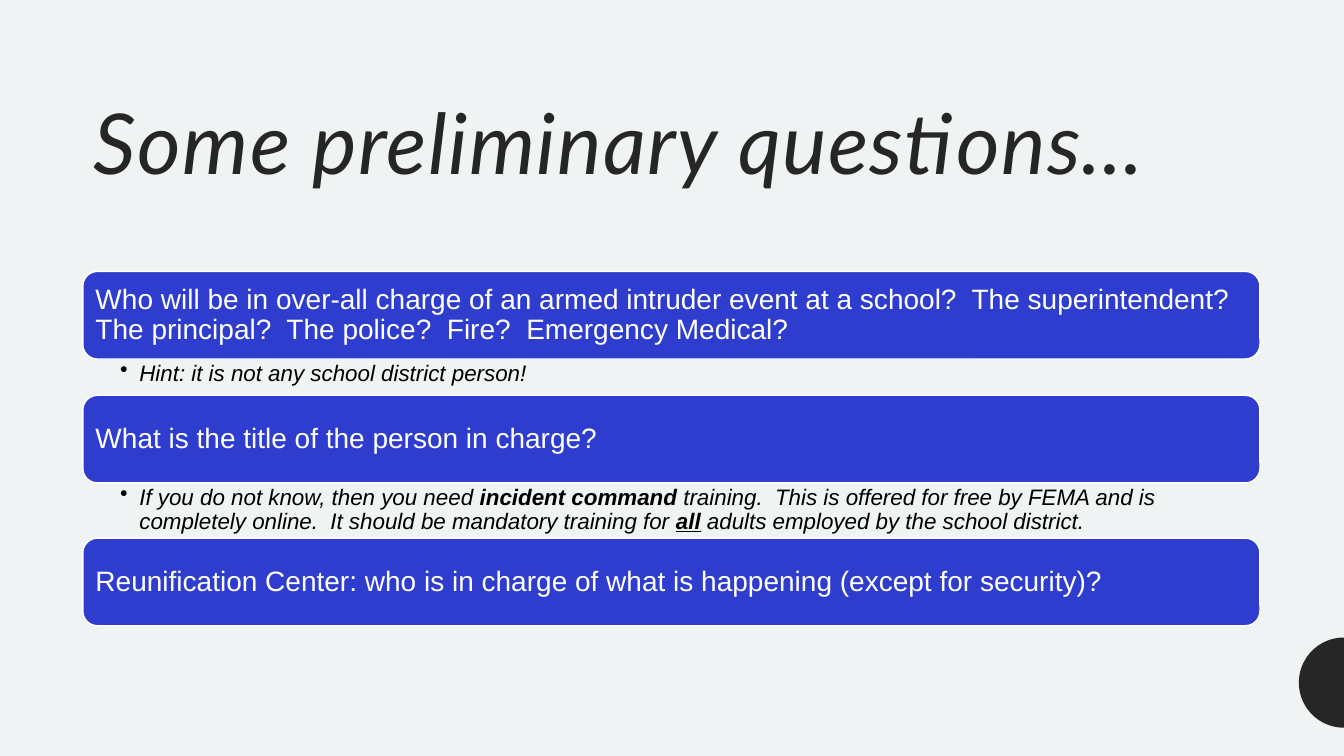
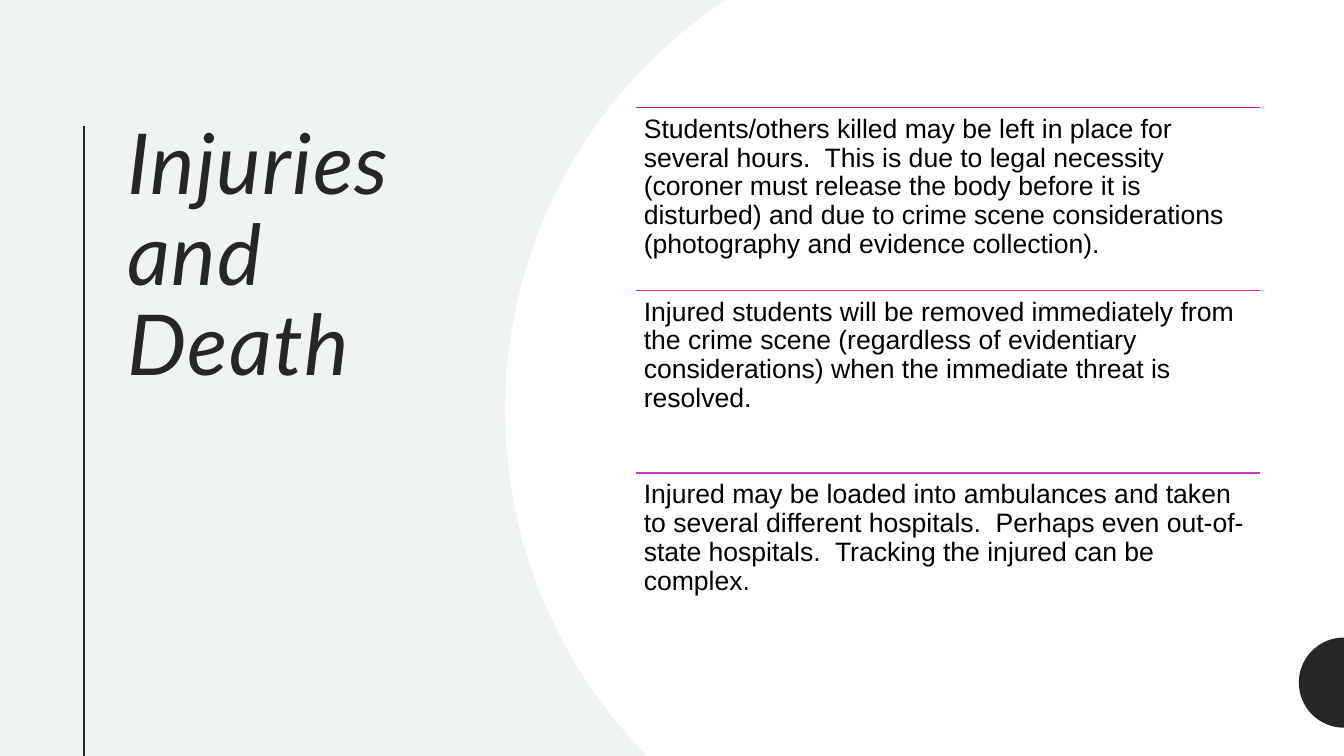
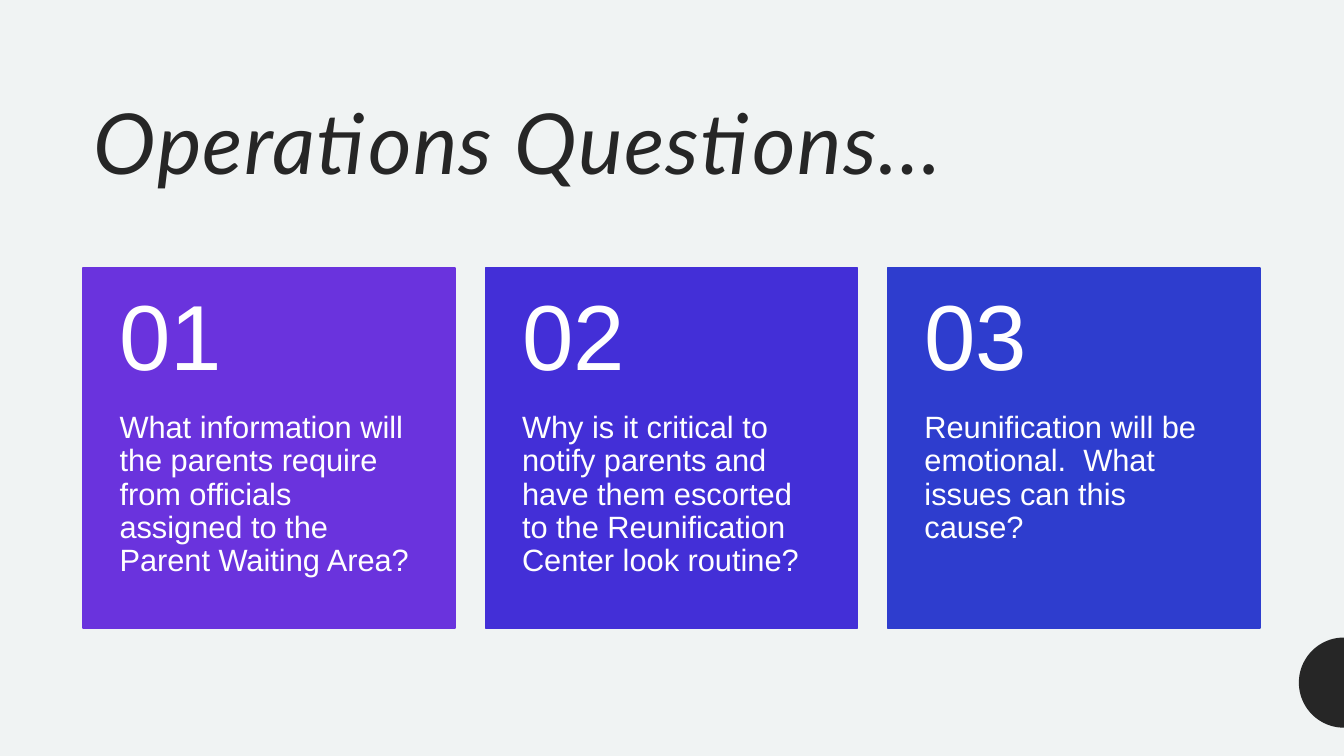
from math import asin, cos, pi, sin

from lxml.etree import SubElement
from pptx import Presentation
from pptx.dml.color import RGBColor
from pptx.enum.shapes import MSO_CONNECTOR as Link, MSO_SHAPE as Kind
from pptx.enum.text import MSO_ANCHOR as Anchor, PP_ALIGN as Align
from pptx.oxml.ns import qn
from pptx.util import Pt

HUES = {
    "back": "F0F3F3", "dark": "262626", "white": "FFFFFF", "black": "000000",
    "blue": "2E3DCE", "indigo": "432FD7", "violet": "6A33DD",
    "rose": "CB2169", "pink": "DA2497", "orchid": "DD33C2",
}
WIDE, HIGH = 960, 540
LEFT, SPAN = 59.2, 840.8

ASKS = [
    ("Who will be in over-all charge of an armed intruder event at a school?  "
     "The superintendent?  The principal?  The police?  Fire?  Emergency Medical?",
     25.9, [("Hint: it is not any school district person!", "")]),
    ("What is the title of the person in charge?", 39.4, [
        ("If you do not know, then you need ", ""),
        ("incident command ", "b"),
        ("training.  This is offered for free by FEMA and is completely online.  "
         "It should be mandatory training for ", ""),
        ("all", "bu"),
        (" adults employed by the school district.", ""),
    ]),
    ("Reunification Center: who is in charge of what is happening "
     "(except for security)?", 0, []),
]
FACTS = [
    ("rose", "Students/others killed may be left in place for several hours.  "
     "This is due to legal necessity (coroner must release the body before it is "
     "disturbed) and due to crime scene considerations (photography and evidence "
     "collection)."),
    ("pink", "Injured students will be removed immediately from the crime scene "
     "(regardless of evidentiary considerations) when the immediate threat is "
     "resolved."),
    ("orchid", "Injured may be loaded into ambulances and taken to several different "
     "hospitals.  Perhaps even out-of-state hospitals.  Tracking the injured can be "
     "complex."),
]
CARDS = [
    ("violet", "What information will the parents require from officials assigned "
     "to the Parent Waiting Area?"),
    ("indigo", "Why is it critical to notify parents and have them escorted to the "
     "Reunification Center look routine?"),
    ("blue", "Reunification will be emotional.  What issues can this cause?"),
]


def tint(name):
    return RGBColor.from_string(HUES[name])


def write(shape, runs, size, hue, inset, anchor=Anchor.TOP, font="Arial",
          slant=False, track=0, bullet=False):
    frame = shape.text_frame
    frame.word_wrap = True
    frame.vertical_anchor = anchor
    (frame.margin_left, frame.margin_top,
     frame.margin_right, frame.margin_bottom) = map(Pt, inset)
    para = frame.paragraphs[0]
    para.alignment = Align.LEFT
    para.line_spacing = 0.9
    if bullet:
        props = para._p.get_or_add_pPr()
        props.set("marL", str(Pt(13.7)))
        props.set("indent", str(-Pt(13.7)))
        SubElement(props, qn("a:buChar")).set("char", "•")
    for text, marks in runs:
        run = para.add_run()
        run.text = text
        face = run.font
        face.name, face.size, face.italic = font, Pt(size), slant
        face.bold, face.underline = "b" in marks, "u" in marks
        face.color.rgb = tint(hue)
        if track:
            run._r.get_or_add_rPr().set("spc", str(track))


def label(slide, box, runs, *args, **opts):
    write(slide.shapes.add_textbox(*map(Pt, box)), runs, *args, **opts)


def block(slide, kind, box, fill, edge):
    shape = slide.shapes.add_shape(kind, *map(Pt, box))
    shape.shadow.inherit = False
    shape.fill.solid()
    shape.fill.fore_color.rgb = tint(fill)
    shape.line.color.rgb = tint(edge)
    shape.line.width = Pt(1)
    return shape


def rule(slide, ends, hue, width):
    line = slide.shapes.add_connector(Link.STRAIGHT, *map(Pt, ends))
    line.line.color.rgb = tint(hue)
    line.line.width = Pt(width)
    SubElement(line._element.spPr, qn("a:effectLst"))


def disc(slide, x, y, radius, fill):
    start = -asin(min(1, y / radius))
    stop = asin(min(1, (HIGH - y) / radius))
    steps = 60
    turns = [start + (stop - start) * i / steps for i in range(steps + 1)]
    dots = [(x - radius * cos(t), y + radius * sin(t)) for t in turns]
    dots += [(WIDE, dots[-1][1]), (WIDE, dots[0][1])]
    dots = [(Pt(a), Pt(b)) for a, b in dots]
    pen = slide.shapes.build_freeform(*dots[0])
    pen.add_line_segments(dots[1:], close=True)
    shape = pen.convert_to_shape()
    shape.shadow.inherit = False
    shape.fill.solid()
    shape.fill.fore_color.rgb = tint(fill)
    shape.line.fill.background()


def start(deck, title, box=(60, 33, 840, 108), anchor=Anchor.BOTTOM):
    slide = deck.slides.add_slide(deck.slide_layouts[6])
    slide.background.fill.solid()
    slide.background.fill.fore_color.rgb = tint("back")
    label(slide, box, [(title, "")], 60, "dark", (7.2, 3.6, 7.2, 3.6),
          anchor, font="Lato", slant=True, track=100)
    return slide


def badge(slide):
    disc(slide, WIDE, 487.6, 32.2, "dark")


def asks(deck):
    slide = start(deck, "Some preliminary questions...")
    badge(slide)
    top, tall = 193.9, 62.6
    for ask, room, hint in ASKS:
        bar = block(slide, Kind.ROUNDED_RECTANGLE, (LEFT, top, SPAN, tall),
                    "blue", "white")
        write(bar, [(ask, "")], 20, "white", (6, 6, 6, 6), Anchor.MIDDLE)
        top += tall
        if hint:
            label(slide, (LEFT, top, SPAN, room), hint, 16, "black",
                  (26.7, 2, 11.4, 2), slant=True, bullet=True)
        top += room


def facts(deck):
    slide = start(deck, "Injuries and Death", (84, 83.6, 245.6, 378.6), Anchor.TOP)
    rule(slide, (60, 90, 60, HIGH), "dark", 1.5)
    disc(slide, 711.9, 293, 351.1, "white")
    badge(slide)
    left, top, wide, tall = 454.2, 76.8, 445.8, 130.5
    for i, (hue, fact) in enumerate(FACTS):
        y = top + i * tall
        rule(slide, (left, y, left + wide, y), hue, 1)
        label(slide, (left, y, wide, tall), [(fact, "")], 19, "black", (5.7,) * 4)


def cards(deck):
    slide = start(deck, "Operations Questions…")
    badge(slide)
    top, tall, head, gap = 191.6, 257, 102.8, 21.6
    wide = (SPAN - 2 * gap) / 3
    for i, (hue, ask) in enumerate(CARDS):
        x = LEFT + i * (wide + gap)
        block(slide, Kind.RECTANGLE, (x, top, wide, tall), hue, hue)
        label(slide, (x, top + head, wide, tall - head), [(ask, "")], 22, "white",
              (26.2, 0, 26.2, 26.2))
        label(slide, (x, top, wide, head), [(f"{i + 1:02}", "")], 66, "white",
              (26.2, 13, 26.2, 13), Anchor.MIDDLE)


def main():
    deck = Presentation()
    deck.slide_width, deck.slide_height = Pt(WIDE), Pt(HIGH)
    for make in (asks, facts, cards):
        make(deck)
    deck.save("out.pptx")


if __name__ == "__main__":
    main()
